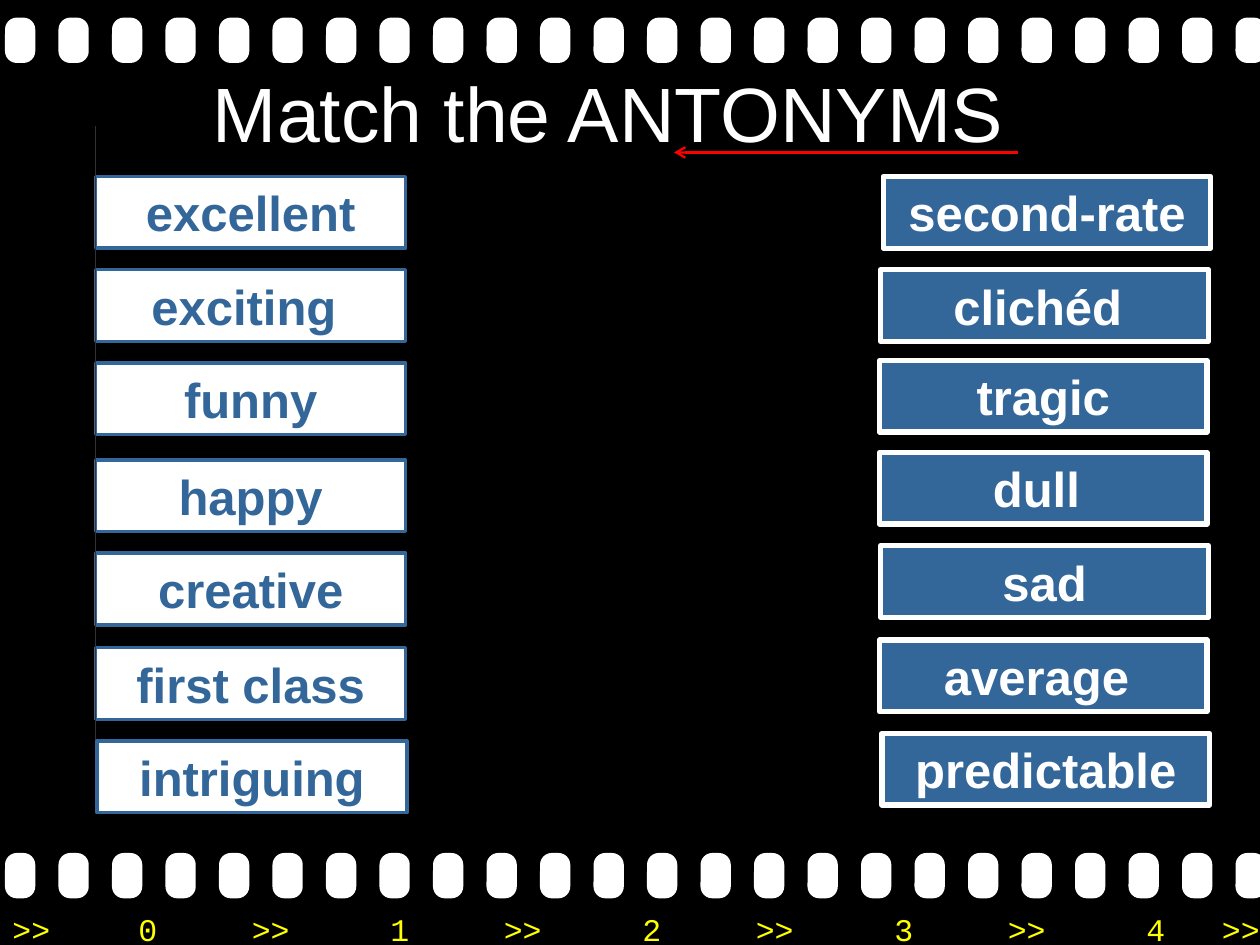
from typing import NamedTuple

from lxml import etree
from pptx import Presentation
from pptx import util as u
from pptx.dml.color import RGBColor
from pptx.enum import shapes, text
from pptx.oxml.ns import qn

WIDTH, HEIGHT = 10, 7.5
COLOURS = {
    "film": "000000",
    "hole": "FFFFFF",
    "blue": "336699",
    "white": "FFFFFF",
    "rule": "323232",
    "arrow": "FF0000",
    "timecode": "FFFF00",
}
HOLES, HOLE_PITCH = 24, WIDTH / 23.55
CARD_HEIGHT = 0.57
TIMECODE_TABS = [1, 1.9, 3, 3.9, 5, 5.9, 7, 7.9, 9, 9.6]


class CardStyle(NamedTuple):
    width: float
    fill: str
    ink: str
    border: float


class Card(NamedTuple):
    word: str
    left: float
    top: float


WORD = CardStyle(2.46, "white", "blue", 2)
ANTONYM = CardStyle(2.6, "blue", "white", 3)

# Each row holds a word and the card facing it; the order is shuffled
ROWS = [
    (Card("excellent", 0.76, 1.4), Card("second-rate", 7.01, 1.4)),
    (Card("exciting ", 0.76, 2.14), Card("clichéd ", 6.99, 2.14)),
    (Card("funny", 0.76, 2.88), Card("tragic", 6.98, 2.86)),
    (Card("happy", 0.76, 3.65), Card("dull ", 6.98, 3.59)),
    (Card("creative", 0.76, 4.39), Card("sad", 6.99, 4.33)),
    (Card("first class", 0.76, 5.14), Card("average ", 6.98, 5.08)),
    (Card("intriguing", 0.77, 5.88), Card("predictable", 7, 5.82)),
]


def colour(name: str) -> RGBColor:
    return RGBColor.from_string(COLOURS[name])


def write(frame, words: str, size: float, ink: str, font: str = "Arial",
          bold: bool = False, align=text.PP_ALIGN.CENTER):
    frame.word_wrap = True
    frame.vertical_anchor = text.MSO_ANCHOR.MIDDLE
    paragraph = frame.paragraphs[0]
    paragraph.text = words
    paragraph.alignment = align
    for run in paragraph.runs:
        run.font.size = u.Pt(size)
        run.font.name = font
        run.font.bold = bold
        run.font.color.rgb = colour(ink)
    return paragraph


def draw_box(slide, kind, left: float, top: float, width: float, height: float, fill: str):
    box = slide.shapes.add_shape(kind, *map(u.Inches, (left, top, width, height)))
    box.shadow.inherit = False
    box.fill.solid()
    box.fill.fore_color.rgb = colour(fill)
    return box


def draw_holes(slide, top: float) -> None:
    for column in range(HOLES):
        hole = draw_box(slide, shapes.MSO_SHAPE.ROUNDED_RECTANGLE,
                        0.04 + column * HOLE_PITCH, top, 0.24, 0.36, "hole")
        hole.adjustments[0] = 0.39
        hole.line.fill.background()


def draw_card(slide, card: Card, style: CardStyle) -> None:
    box = draw_box(slide, shapes.MSO_SHAPE.RECTANGLE, card.left, card.top,
                   style.width, CARD_HEIGHT, style.fill)
    box.line.color.rgb = colour(style.ink)
    box.line.width = u.Pt(style.border)
    write(box.text_frame, card.word, 28, style.ink, bold=True)


def draw_row(slide, word: Card, antonym: Card) -> None:
    draw_card(slide, word, WORD)
    draw_card(slide, antonym, ANTONYM)


def draw_line(slide, start: tuple, end: tuple, ink: str, weight: float, arrow: bool = False) -> None:
    line = slide.shapes.add_connector(shapes.MSO_CONNECTOR.STRAIGHT,
                                      *map(u.Inches, (*start, *end)))
    line.line.color.rgb = colour(ink)
    line.line.width = u.Pt(weight)
    if arrow:
        etree.SubElement(line.line._get_or_add_ln(), qn("a:tailEnd"), type="arrow")
    etree.SubElement(line._element.spPr, qn("a:effectLst"))


def draw_timecode(slide) -> None:
    strip = slide.shapes.add_textbox(*map(u.Inches, (0, 7.17, WIDTH * 1.02, 0.4)))
    strip.text_frame.margin_right = 0
    marks = [mark for number in range(5) for mark in (">>", str(number))] + [">>"]
    line = write(strip.text_frame, "\t".join(marks), 18, "timecode",
                 "Courier New", align=text.PP_ALIGN.LEFT)
    stops = etree.SubElement(line._p.get_or_add_pPr(), qn("a:tabLst"))
    for stop in TIMECODE_TABS:
        etree.SubElement(stops, qn("a:tab"), pos=str(u.Inches(stop)), algn="l")


def main() -> None:
    deck = Presentation()
    deck.slide_width, deck.slide_height = u.Inches(WIDTH), u.Inches(HEIGHT)
    slide = deck.slides.add_slide(deck.slide_layouts[6])
    slide.background.fill.solid()
    slide.background.fill.fore_color.rgb = colour("film")

    # Film strip: perforations and timecode
    for top in (6.77, 0.14):
        draw_holes(slide, top)
    draw_timecode(slide)

    # Title, set slightly left of centre
    title = slide.shapes.add_textbox(*map(u.Inches, (0.5, 0.38, 9, 1.02)))
    title.text_frame.margin_right = u.Inches(0.44)
    write(title.text_frame, "Match the ANTONYMS", 44, "white")

    # Word cards; the vertical rule runs behind the last row only
    for row in ROWS[:-1]:
        draw_row(slide, *row)
    draw_line(slide, (0.76, 1), (0.76, 6.24), "rule", 0.75)
    draw_row(slide, *ROWS[-1])

    # Arrow under the title
    draw_line(slide, (8.08, 1.21), (5.35, 1.21), "arrow", 1.25, arrow=True)

    deck.save("out.pptx")


if __name__ == "__main__":
    main()
